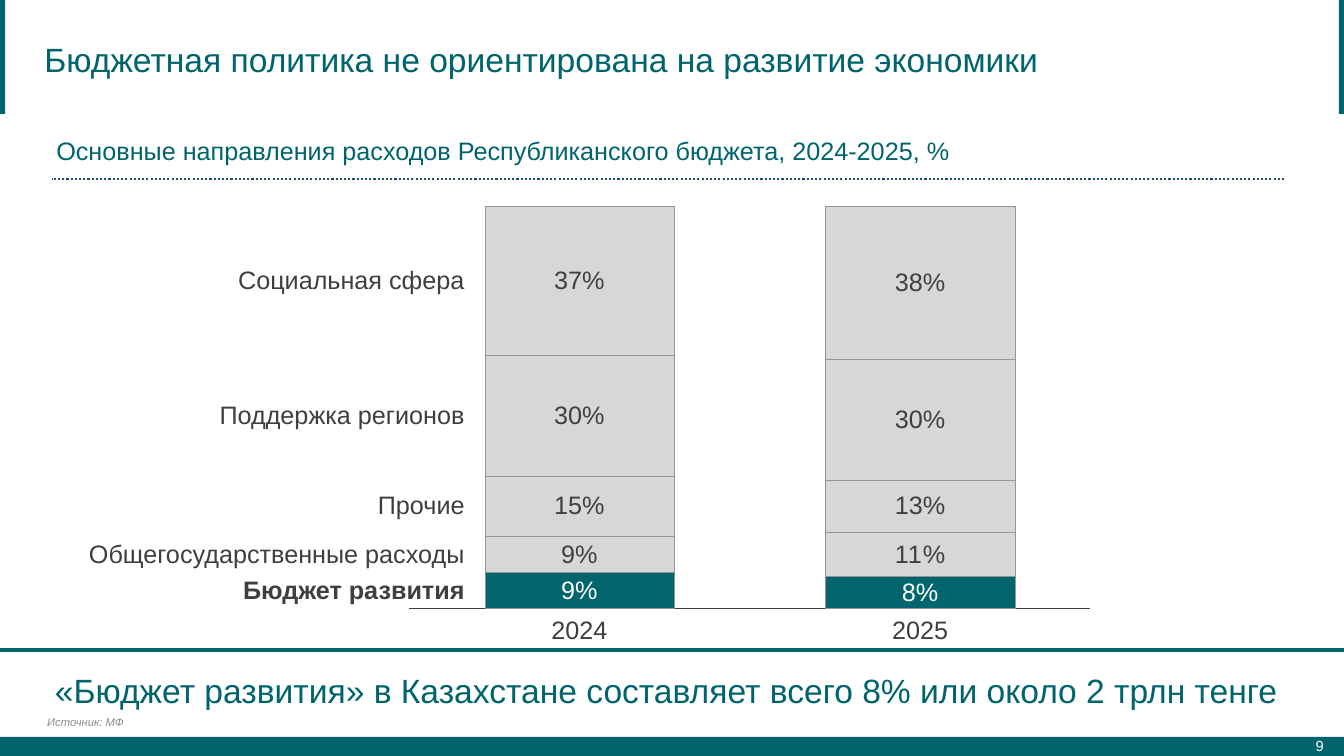
from lxml.etree import SubElement
from pptx import Presentation
from pptx.chart.data import CategoryChartData
from pptx.dml.color import RGBColor
from pptx.enum.chart import XL_CHART_TYPE, XL_TICK_LABEL_POSITION, XL_TICK_MARK
from pptx.enum.dml import MSO_LINE
from pptx.enum.shapes import MSO_CONNECTOR, MSO_SHAPE
from pptx.enum.text import MSO_ANCHOR, PP_ALIGN
from pptx.oxml.ns import qn
from pptx.util import Cm, Pt

TEAL = RGBColor(0x00, 0x64, 0x6C)
TEAL_BAR = RGBColor(0x00, 0x65, 0x6D)
LIGHT = RGBColor(0xD6, 0xD7, 0xD9)
OUTLINE = RGBColor(0x96, 0x96, 0x96)
DARK = RGBColor(0x3F, 0x3F, 0x3F)
GRAY = RGBColor(0x8C, 0x8C, 0x8C)
NAVY = RGBColor(0x1F, 0x4E, 0x79)
WHITE = RGBColor(0xFF, 0xFF, 0xFF)

WIDTH, HEIGHT = 33.87, 19.05
CHART = (10.08, 4.12, 17.63, 12.3)
PLOT = {"x": 0.013, "y": 0.088, "w": 0.974, "h": 0.824}
YEARS = ["2024", "2025"]
SPENDING = [
    ("Бюджет развития", (9, 8), 5.9),
    ("Общегосударственные расходы", (9, 11), 9.8),
    ("Прочие", (15, 13), 2.5),
    ("Поддержка регионов", (30, 30), 6.5),
    ("Социальная сфера", (37, 38), 6),
]
NO_INSETS = (0, 0, 0, 0)
INSETS = (0.25, 0.13, 0.25, 0.13)


def apply(target, values):
    for name, value in values.items():
        setattr(target, name, value)


class SlideBuilder:
    font_name = "Arial"

    def __init__(self, slide):
        self.slide = slide

    def set_font(self, font, size, color, **values):
        apply(font, {"name": self.font_name, "size": Pt(size), **values})
        font.color.rgb = color

    def bar(self, x, y, w, h):
        sp = self.slide.shapes.add_shape(MSO_SHAPE.RECTANGLE, Cm(x), Cm(y), Cm(w), Cm(h))
        sp.shadow.inherit = False
        sp.fill.solid()
        sp.fill.fore_color.rgb = TEAL
        sp.line.fill.background()

    def text(self, text, box, size, color, align=PP_ALIGN.LEFT, anchor=MSO_ANCHOR.MIDDLE,
             insets=INSETS, wrap=True, spacing=None, **font):
        tf = self.slide.shapes.add_textbox(*map(Cm, box)).text_frame
        left, top, right, bottom = map(Cm, insets)
        apply(tf, {"word_wrap": wrap, "vertical_anchor": anchor, "margin_left": left,
                   "margin_top": top, "margin_right": right, "margin_bottom": bottom})
        p = tf.paragraphs[0]
        apply(p, {"alignment": align, "line_spacing": spacing})
        r = p.add_run()
        r.text = text
        self.set_font(r.font, size, color, **font)

    def label(self, text, box, align, anchor=MSO_ANCHOR.MIDDLE, **font):
        self.text(text, box, 18, DARK, align, anchor, NO_INSETS, False, 0.9, **font)

    def line(self, x1, x2, y, color, width, dash=None):
        cn = self.slide.shapes.add_connector(MSO_CONNECTOR.STRAIGHT, Cm(x1), Cm(y), Cm(x2), Cm(y))
        cn.line.color.rgb = color
        apply(cn.line, {"width": Pt(width), "dash_style": dash})
        SubElement(cn._element.spPr, qn("a:effectLst"))

    def stacked_chart(self, box, categories, rows):
        data = CategoryChartData(number_format='0"%"')
        data.categories = categories
        for name, values, _ in rows:
            data.add_series(name, values)
        chart = self.slide.shapes.add_chart(
            XL_CHART_TYPE.COLUMN_STACKED, *map(Cm, box), data).chart
        apply(chart, {"has_legend": False, "has_title": False})
        self.set_font(chart.font, 18, DARK)
        apply(chart.value_axis, {"visible": False, "has_major_gridlines": False,
                                 "minimum_scale": 0, "maximum_scale": 100})
        apply(chart.category_axis, {"tick_label_position": XL_TICK_LABEL_POSITION.NONE,
                                    "major_tick_mark": XL_TICK_MARK.NONE,
                                    "minor_tick_mark": XL_TICK_MARK.NONE})
        axis_line = chart.category_axis.format.line
        axis_line.color.rgb = DARK
        axis_line.width = Pt(0.75)
        plot = chart.plots[0]
        apply(plot, {"gap_width": 80, "overlap": 100, "vary_by_categories": False})
        for i, series in enumerate(plot.series):
            series.format.fill.solid()
            series.format.fill.fore_color.rgb = LIGHT if i else TEAL_BAR
            series.format.line.color.rgb = OUTLINE
            series.format.line.width = Pt(0.25)
            labels = series.data_labels
            apply(labels, {"show_value": True, "number_format": '0"%"',
                           "number_format_is_linked": False})
            self.set_font(labels.font, 18, DARK if i else WHITE)
        self.plot_layout(chart)

    def plot_layout(self, chart):
        area = chart._chartSpace.chart.plotArea
        for old in area.findall(qn("c:layout")):
            area.remove(old)
        layout = SubElement(area, qn("c:layout"))
        area.insert(0, layout)
        manual = SubElement(layout, qn("c:manualLayout"))
        settings = {"layoutTarget": "inner", "xMode": "edge", "yMode": "edge", **PLOT}
        for name, value in settings.items():
            SubElement(manual, qn(f"c:{name}")).set("val", str(value))


def main():
    prs = Presentation()
    apply(prs, {"slide_width": Cm(WIDTH), "slide_height": Cm(HEIGHT)})
    s = SlideBuilder(prs.slides.add_slide(prs.slide_layouts[6]))

    s.bar(0, 18.57, WIDTH, 0.48)
    s.text("9", (30.28, 18.29, 3.28, 1.02), 10.5, WHITE, PP_ALIGN.RIGHT,
           insets=(0.2, 0.1, 0.2, 0.1))
    for x in (0, WIDTH - 0.13):
        s.bar(x, -0.05, 0.13, 2.92)
    s.text("Бюджетная политика не ориентирована на развитие экономики",
           (0.87, 0.51, 31.5, 1.96), 24, TEAL)
    s.text("Источник: МФ", (1.19, 18.04, 17.4, 0.33), 8, GRAY,
           anchor=MSO_ANCHOR.BOTTOM, insets=NO_INSETS, italic=True)

    s.stacked_chart(CHART, YEARS, SPENDING)
    left, top, width, height = CHART
    plot_left, plot_width = left + width * PLOT["x"], width * PLOT["w"]
    plot_height = height * PLOT["h"]
    plot_bottom = top + height * PLOT["y"] + plot_height
    for i, year in enumerate(YEARS):
        center = plot_left + plot_width * (i + 0.5) / len(YEARS)
        s.label(year, (center - 0.8, 15.56, 1.6, 0.69), PP_ALIGN.CENTER, MSO_ANCHOR.TOP)
    total = 0
    for i, (name, values, w) in enumerate(SPENDING):
        middle = plot_bottom - plot_height * (total + values[0] / 2) / 100
        s.label(name, (11.71 - w, middle - 0.33, w, 0.69), PP_ALIGN.RIGHT, bold=i == 0)
        total += values[0]

    s.text("Основные направления расходов Республиканского бюджета, 2024-2025, %",
           (1.17, 3.23, 23.47, 1.07), 18, TEAL, anchor=MSO_ANCHOR.BOTTOM)
    s.line(32.36, 1.3, 4.5, NAVY, 1.5, MSO_LINE.ROUND_DOT)
    s.line(0, WIDTH, 16.38, TEAL, 3)
    s.text("«Бюджет развития» в Казахстане составляет всего 8% или около 2 трлн тенге",
           (0.23, 16.41, 33.12, 1.96), 24, TEAL, PP_ALIGN.CENTER)
    prs.save("out.pptx")


if __name__ == "__main__":
    main()
